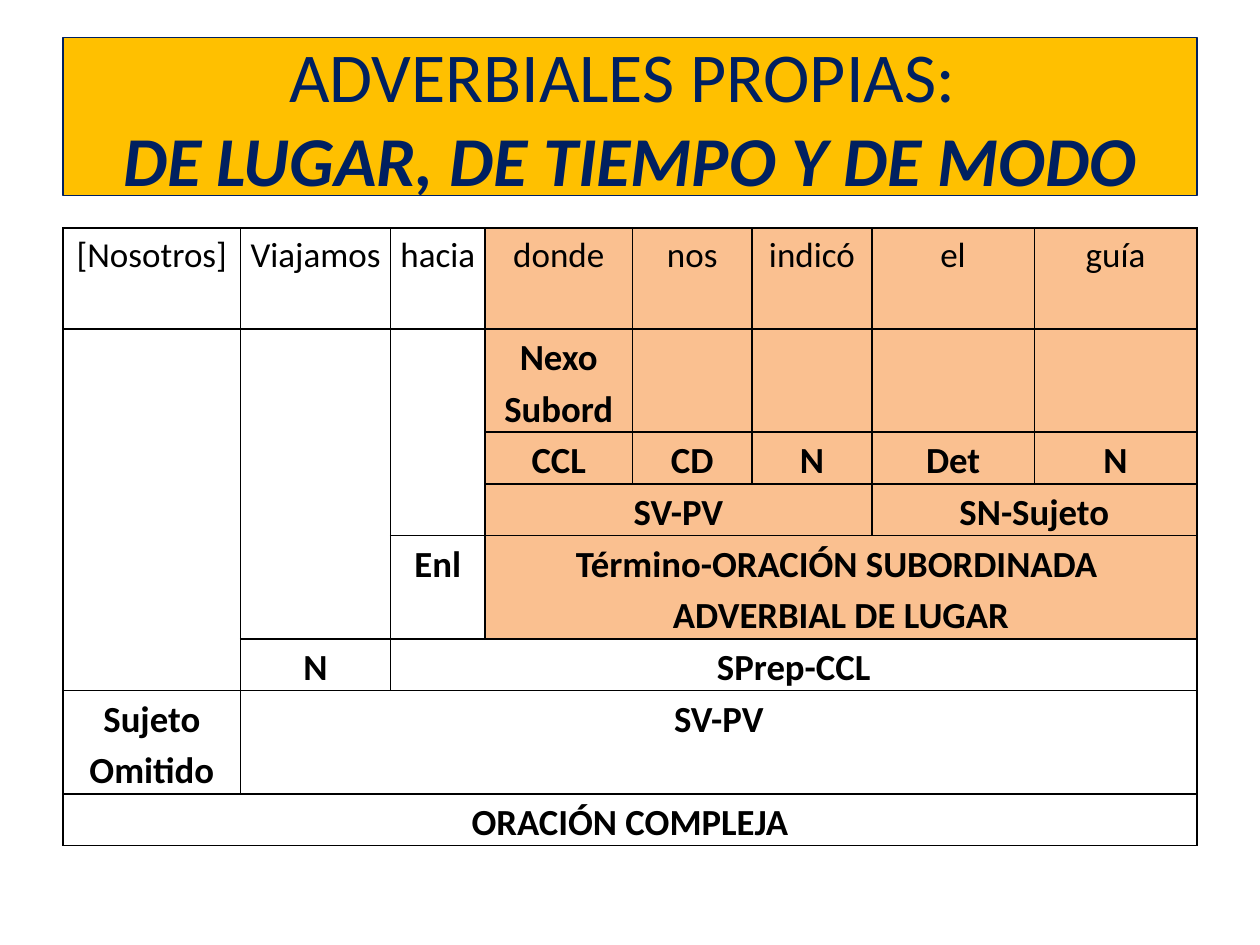
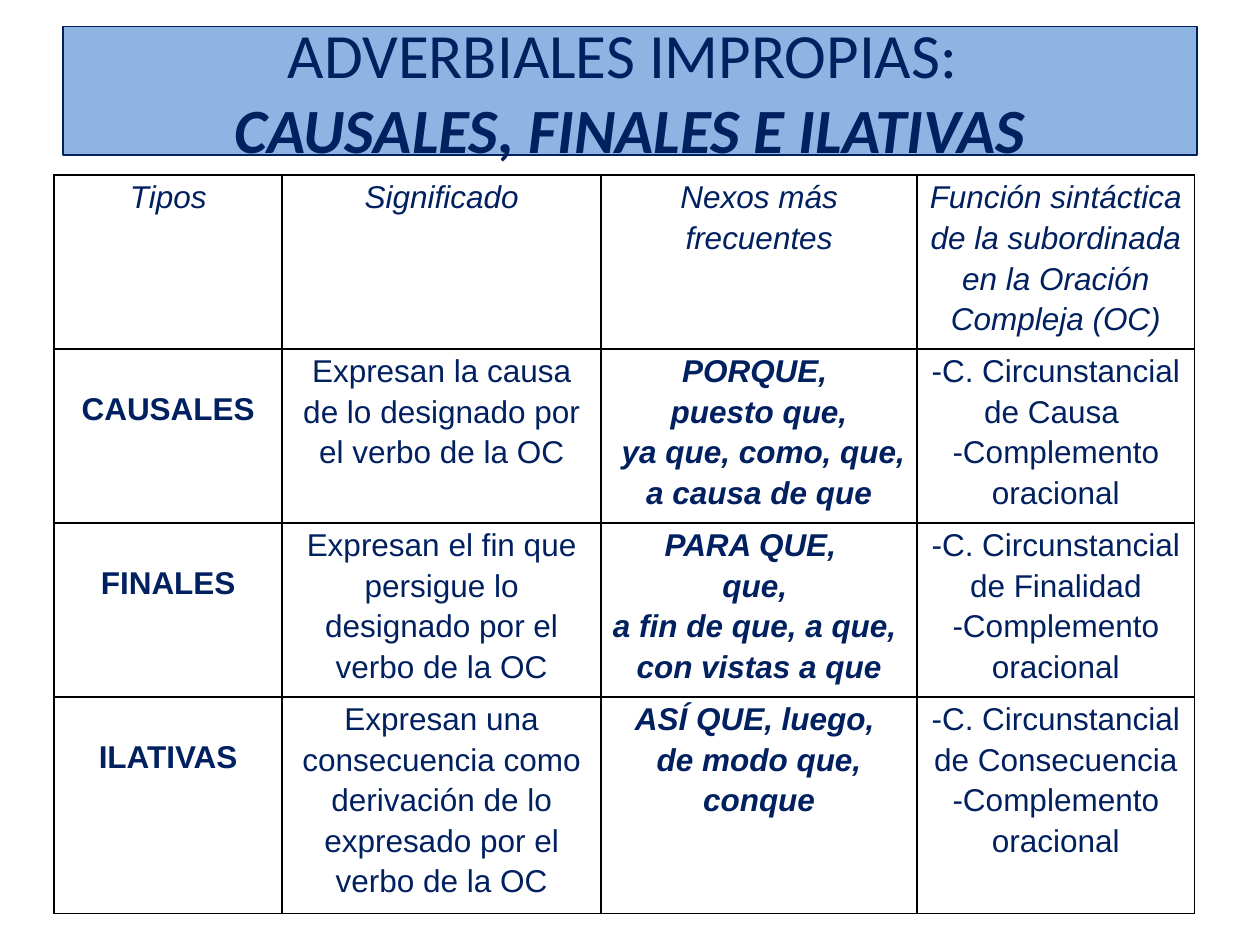
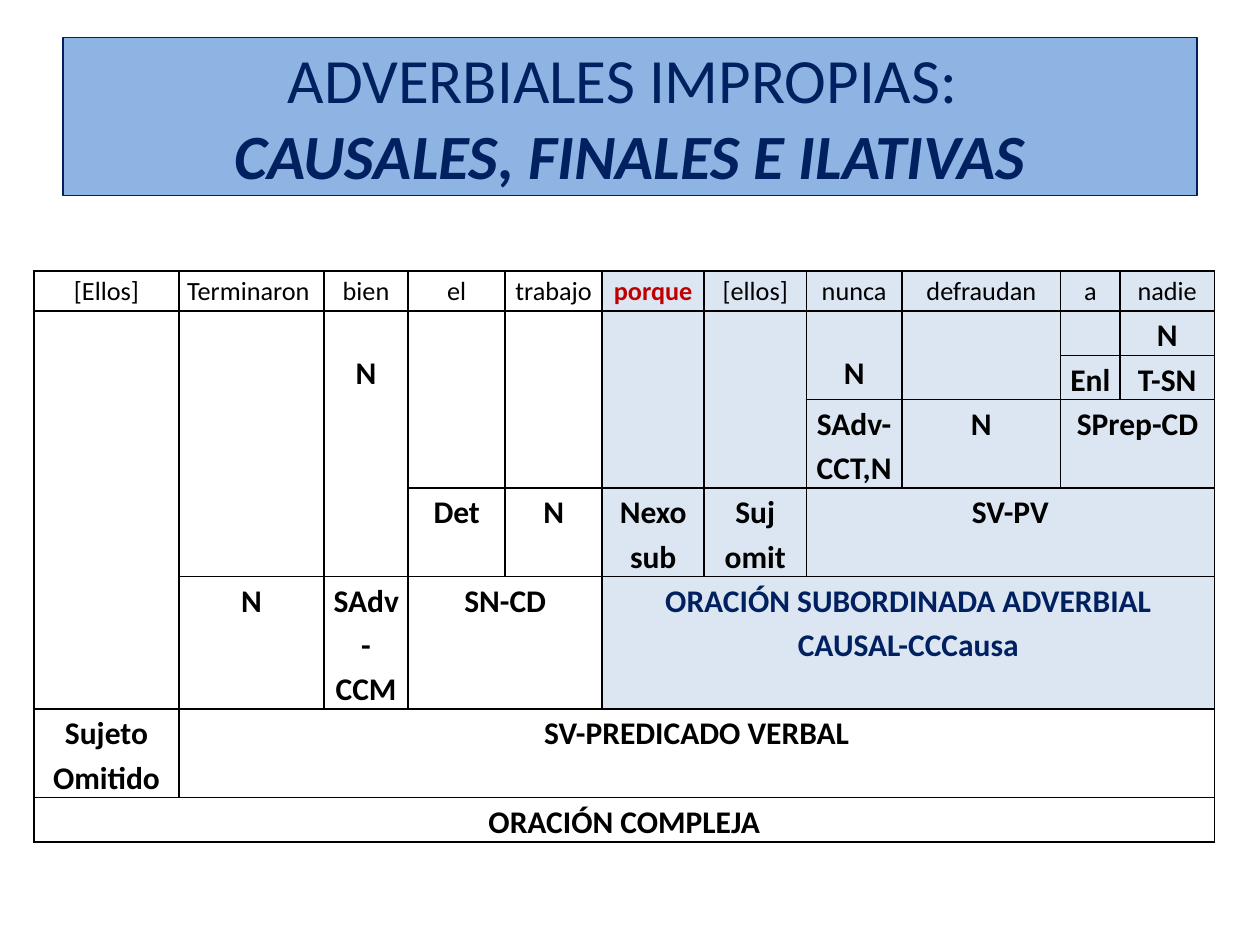
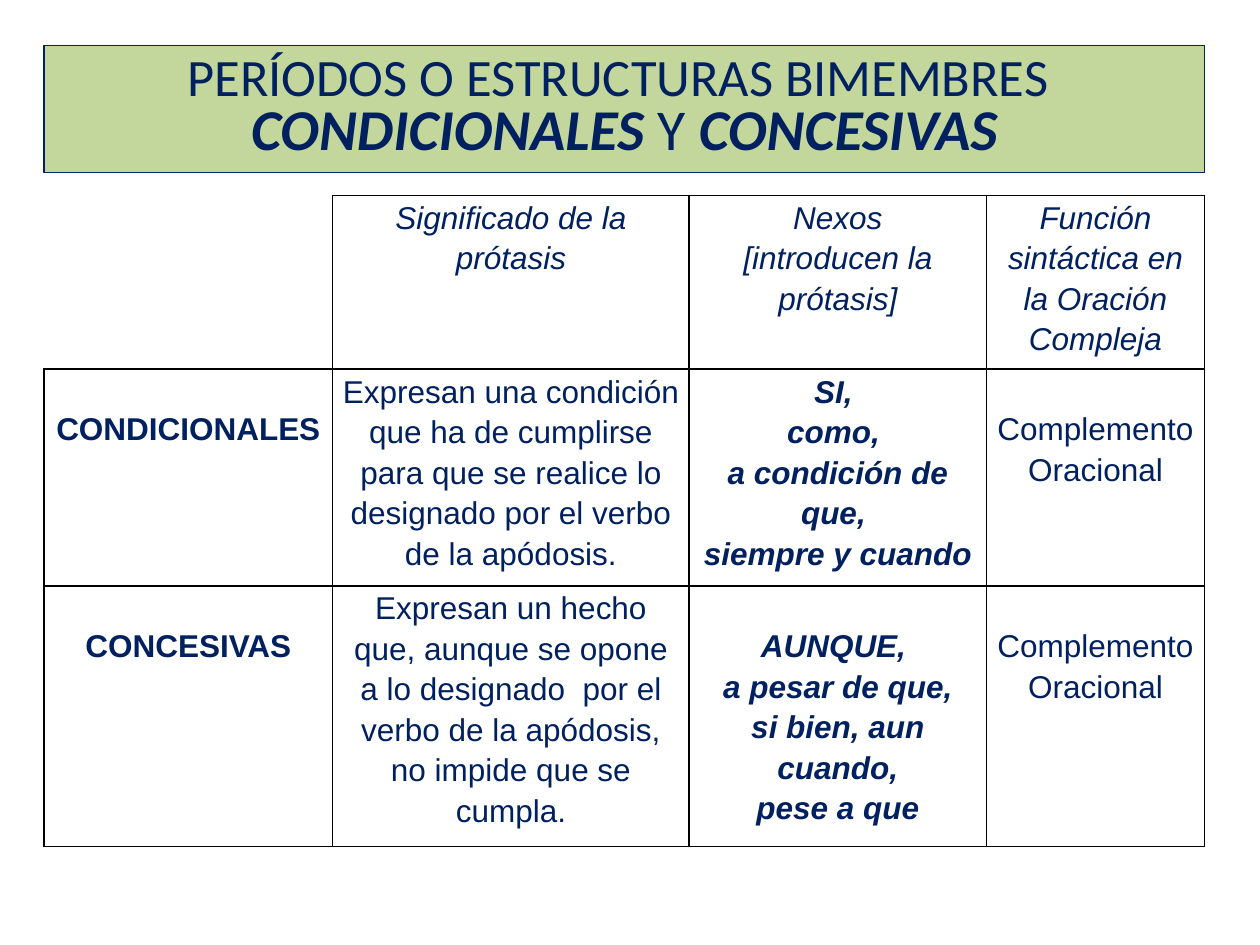
"""Build four slides on Spanish adverbial clauses: boxed titles over tables."""
from dataclasses import dataclass

from lxml.etree import SubElement
from pptx import Presentation
from pptx.dml.color import RGBColor
from pptx.enum.text import MSO_ANCHOR, MSO_AUTO_SIZE, PP_ALIGN
from pptx.oxml.ns import qn
from pptx.util import Inches, Pt


@dataclass(frozen=True)
class Theme:
    """Colours, fonts and measures shared by the slides."""
    navy: str = "002060"
    black: str = "000000"
    red: str = "C00000"
    gold: str = "FFC000"
    blue: str = "8EB4E3"
    green: str = "C3D69B"
    peach: str = "FAC090"
    ice: str = "DCE6F2"
    title_font: str = "Calibri"
    tree_font: str = "Calibri"
    chart_font: str = "Arial"
    chart_size: int = 18
    line_spacing: float = 1.15
    drop: float = 0.3
    title_line: float = 0.75
    border: int = 1


T = Theme()
IMPROPER = [[("ADVERBIALES IMPROPIAS: ", False)],
            [("CAUSALES, FINALES E ILATIVAS", True)]]

PROPER_TREE = dict(
    title=dict(lines=[[("ADVERBIALES PROPIAS: ", False)],
                      [("DE LUGAR, DE TIEMPO Y DE MODO", True)]],
               box=(0.5, 0.3, 9, 1.25), fill=T.gold, sizes=(40, 40)),
    at=(0.5, 1.81), inset=0.07, sizes=(20, 21),
    cols=[1.41, 1.19, 0.75, 1.17, 0.95, 0.95, 1.29, 1.29],
    rows=[0.8, 0.81, 0.4, 0.4, 0.81, 0.4, 0.81, 0.4],
    words=["[Nosotros]", "Viajamos", "hacia", "donde", "nos", "indicó", "el", "guía"],
    blocks=[(1, 0, 5, 1, ""), (1, 1, 4, 1, ""), (1, 2, 3, 1, ""),
            (1, 3, 1, 1, "Nexo Subord"),
            (2, 3, 1, 1, "CCL"), (2, 4, 1, 1, "CD"), (2, 5, 1, 1, "N"),
            (2, 6, 1, 1, "Det"), (2, 7, 1, 1, "N"),
            (3, 3, 1, 3, "SV-PV"), (3, 6, 1, 2, "SN-Sujeto"),
            (4, 2, 1, 1, "Enl"),
            (4, 3, 1, 5, "Término-ORACIÓN SUBORDINADA \nADVERBIAL DE LUGAR"),
            (5, 1, 1, 1, "N"), (5, 2, 1, 6, "SPrep-CCL"),
            (6, 0, 1, 1, "Sujeto Omitido"), (6, 1, 1, 7, "SV-PV"),
            (7, 0, 1, 8, "ORACIÓN COMPLEJA")],
    clause=dict(first_col=3, last_row=4, fill=T.peach), accents={}, lowered=set())

IMPROPER_CHART = dict(
    title=dict(lines=IMPROPER, box=(0.5, 0.21, 9, 1.02), fill=T.blue, sizes=(36, 36)),
    at=(0.43, 1.39), inset=0.07,
    cols=[1.81, 2.53, 2.51, 2.2], rows=[1.38, 1.38, 1.38, 1.72],
    cells=[
        ["Tipos", "Significado", "Nexos más frecuentes",
         "Función sintáctica de la subordinada en la Oración Compleja (OC)"],
        ["CAUSALES", "Expresan la causa de lo designado por el verbo de la OC",
         "PORQUE, \npuesto que,\n ya que, como, que,\na causa de que",
         "-C. Circunstancial de Causa \n-Complemento oracional"],
        ["FINALES", "Expresan el fin que persigue lo designado por el verbo de la OC",
         "PARA QUE,  \nque, \na fin de que, a que, \ncon vistas a que",
         "-C. Circunstancial de Finalidad\n-Complemento oracional"],
        ["ILATIVAS", "Expresan una consecuencia como derivación de lo expresado "
         "por el verbo de la OC",
         "ASÍ QUE, luego, \nde modo que, conque",
         "-C. Circunstancial de Consecuencia\n-Complemento oracional"]],
    lowered={(1, 0), (2, 0), (3, 0)})

IMPROPER_TREE = dict(
    title=dict(lines=IMPROPER, box=(0.5, 0.3, 9, 1.25), fill=T.blue, sizes=(36, 36)),
    at=(0.27, 2.15), inset=0.06, sizes=(15, 18),
    cols=[1.15, 1.15, 0.67, 0.77, 0.77, 0.81, 0.81, 0.76, 1.26, 0.47, 0.75],
    rows=[0.32, 0.35, 0.34, 0.69, 0.69, 1.03, 0.69, 0.34],
    words=["[Ellos]", "Terminaron ", "bien", "el", "trabajo", "porque", "[ellos]",
           "nunca", "defraudan", "a", "nadie"],
    blocks=[(1, 0, 5, 1, ""), (1, 1, 4, 1, ""), (1, 2, 4, 1, "N"),
            (1, 3, 3, 1, ""), (1, 4, 3, 1, ""), (1, 5, 3, 1, ""), (1, 6, 3, 1, ""),
            (1, 7, 2, 1, "N"), (1, 8, 2, 1, ""), (1, 10, 1, 1, "N"),
            (2, 9, 1, 1, "Enl"), (2, 10, 1, 1, "T-SN"),
            (3, 7, 1, 1, "SAdv-CCT,N"), (3, 8, 1, 1, "N"), (3, 9, 1, 2, "SPrep-CD"),
            (4, 3, 1, 1, "Det"), (4, 4, 1, 1, "N"), (4, 5, 1, 1, "Nexo sub"),
            (4, 6, 1, 1, "Suj omit"), (4, 7, 1, 4, "SV-PV"),
            (5, 1, 1, 1, "N"), (5, 2, 1, 1, "SAdv-CCM"), (5, 3, 1, 2, "SN-CD"),
            (5, 5, 1, 6, "ORACIÓN SUBORDINADA ADVERBIAL CAUSAL-CCCausa"),
            (6, 0, 1, 1, "Sujeto\nOmitido"), (6, 1, 1, 10, "SV-PREDICADO VERBAL"),
            (7, 0, 1, 11, "ORACIÓN COMPLEJA")],
    clause=dict(first_col=5, last_row=5, fill=T.ice),
    accents={(0, 5): T.red, (5, 5): T.navy}, lowered={(1, 2), (1, 7)})

PERIODS_CHART = dict(
    title=dict(lines=[[("PERÍODOS O ESTRUCTURAS BIMEMBRES ", False)],
                      [("CONDICIONALES", True), (" Y ", False), ("CONCESIVAS", True)]],
               box=(0.35, 0.36, 9.21, 1.01), fill=T.green, sizes=(30, 33), spacing=0.8),
    at=(0.35, 1.55), inset=0.07,
    cols=[2.29, 2.83, 2.36, 1.73], rows=[1.38, 1.72, 2.07],
    cells=[
        ["", "Significado de la prótasis", "Nexos\n[introducen la prótasis]",
         "Función sintáctica en la Oración Compleja"],
        ["CONDICIONALES", "Expresan una condición que ha de cumplirse para que se "
         "realice lo designado por el verbo de la apódosis.",
         "SI, \ncomo, \na condición de que, \nsiempre y cuando",
         "Complemento \nOracional"],
        ["CONCESIVAS", "Expresan un hecho que, aunque se opone a lo designado  por el "
         "verbo de la apódosis, no impide que se cumpla.",
         "AUNQUE, \na pesar de que,\nsi bien, aun cuando,\npese a que",
         "Complemento \nOracional"]],
    lowered={(1, 0), (1, 3), (2, 0), (2, 2), (2, 3)})


def rgb(value):
    """Turn a hex string into a colour."""
    return RGBColor.from_string(value)


def set_font(font, name, size, color, bold=False, italic=False):
    """Set every property of a font."""
    font.name, font.size, font.bold, font.italic = name, Pt(size), bold, italic
    font.color.rgb = rgb(color)


def add_title(s, lines, box, fill, sizes, spacing=None):
    """Move, fill and write the title placeholder."""
    sp = s.shapes.title
    sp.left, sp.top, sp.width, sp.height = map(Inches, box)
    sp.fill.solid()
    sp.fill.fore_color.rgb = rgb(fill)
    sp.line.color.rgb = rgb(T.navy)
    sp.line.width = Pt(T.title_line)
    tf = sp.text_frame
    tf.auto_size, tf.vertical_anchor = MSO_AUTO_SIZE.NONE, MSO_ANCHOR.MIDDLE
    p = tf.paragraphs[0]
    p.alignment, p.line_spacing = PP_ALIGN.CENTER, spacing
    set_font(p.font, T.title_font, sizes[0], T.navy)
    for i, line in enumerate(lines):
        if i:
            p.add_line_break()
        for text, strong in line:
            r = p.add_run()
            r.text = text
            r.font.size, r.font.bold, r.font.italic = Pt(sizes[i]), strong, strong


def set_borders(cell, sides):
    """Draw the named sides of a cell and clear the others."""
    tc_pr = cell._tc.get_or_add_tcPr()
    for side in "LRTB":
        ln = SubElement(tc_pr, qn(f"a:ln{side}"), w=str(Pt(T.border)))
        if side in sides:
            fill = SubElement(ln, qn("a:solidFill"))
            SubElement(fill, qn("a:srgbClr"), val=T.black)
        else:
            SubElement(ln, qn("a:noFill"))


def add_grid(s, data, fill_at, sides_at):
    """Add a bordered table with the given columns and rows."""
    cols, rows = data["cols"], data["rows"]
    frame = s.shapes.add_table(len(rows), len(cols), *map(
        Inches, (*data["at"], sum(cols), sum(rows))))
    tbl = frame.table
    tbl.first_row = tbl.horz_banding = False
    for part, sizes, side in ((tbl.columns, cols, "width"), (tbl.rows, rows, "height")):
        for item, size in zip(part, sizes):
            setattr(item, side, Inches(size))
    for r in range(len(rows)):
        for c in range(len(cols)):
            cell = tbl.cell(r, c)
            cell.margin_left = cell.margin_right = Inches(data["inset"])
            cell.margin_top = Inches(T.drop if (r, c) in data["lowered"] else 0)
            cell.margin_bottom = 0
            set_borders(cell, sides_at(r, c))
            fill = fill_at(r, c)
            if fill:
                cell.fill.solid()
                cell.fill.fore_color.rgb = rgb(fill)
            else:
                cell.fill.background()
    return tbl


def write(cell, text, *style):
    """Write centred paragraphs in a cell."""
    if not text:
        return
    cell.text_frame.text = text
    for p in cell.text_frame.paragraphs:
        p.alignment, p.line_spacing = PP_ALIGN.CENTER, T.line_spacing
        set_font(p.font, *style)


def add_tree(s, data):
    """Add a sentence analysis: words on top, merged constituents below."""
    clause, accents = data["clause"], data["accents"]

    def fill_at(r, c):
        inside = c >= clause["first_col"] and r <= clause["last_row"]
        return clause["fill"] if inside else None

    tbl = add_grid(s, data, fill_at, lambda r, c: "LRTB")
    words = [(0, c, 1, 1, word) for c, word in enumerate(data["words"])]
    for r, c, height, width, text in words + data["blocks"]:
        cell = tbl.cell(r, c)
        if height * width > 1:
            cell.merge(tbl.cell(r + height - 1, c + width - 1))
        write(cell, text, T.tree_font, data["sizes"][r > 0],
              accents.get((r, c), T.black), r > 0 or (r, c) in accents)


def add_chart_table(s, data):
    """Add a comparison table: italic heads, bold types, bold italic links."""
    cells = data["cells"]
    tbl = add_grid(s, data, lambda r, c: None,
                   lambda r, c: "LRTB" if cells[r][c] else "RB")
    for r, row in enumerate(cells):
        for c, text in enumerate(row):
            write(tbl.cell(r, c), text, T.chart_font, T.chart_size, T.navy,
                  r > 0 and c in (0, 2), r == 0 or c == 2)


def main():
    """Build and save the slides."""
    prs = Presentation()
    prs.slide_width, prs.slide_height = Inches(10), Inches(7.5)
    for data, add_body in ((PROPER_TREE, add_tree), (IMPROPER_CHART, add_chart_table),
                           (IMPROPER_TREE, add_tree), (PERIODS_CHART, add_chart_table)):
        s = prs.slides.add_slide(prs.slide_layouts[5])
        add_title(s, **data["title"])
        add_body(s, data)
    prs.save("out.pptx")


if __name__ == "__main__":
    main()
